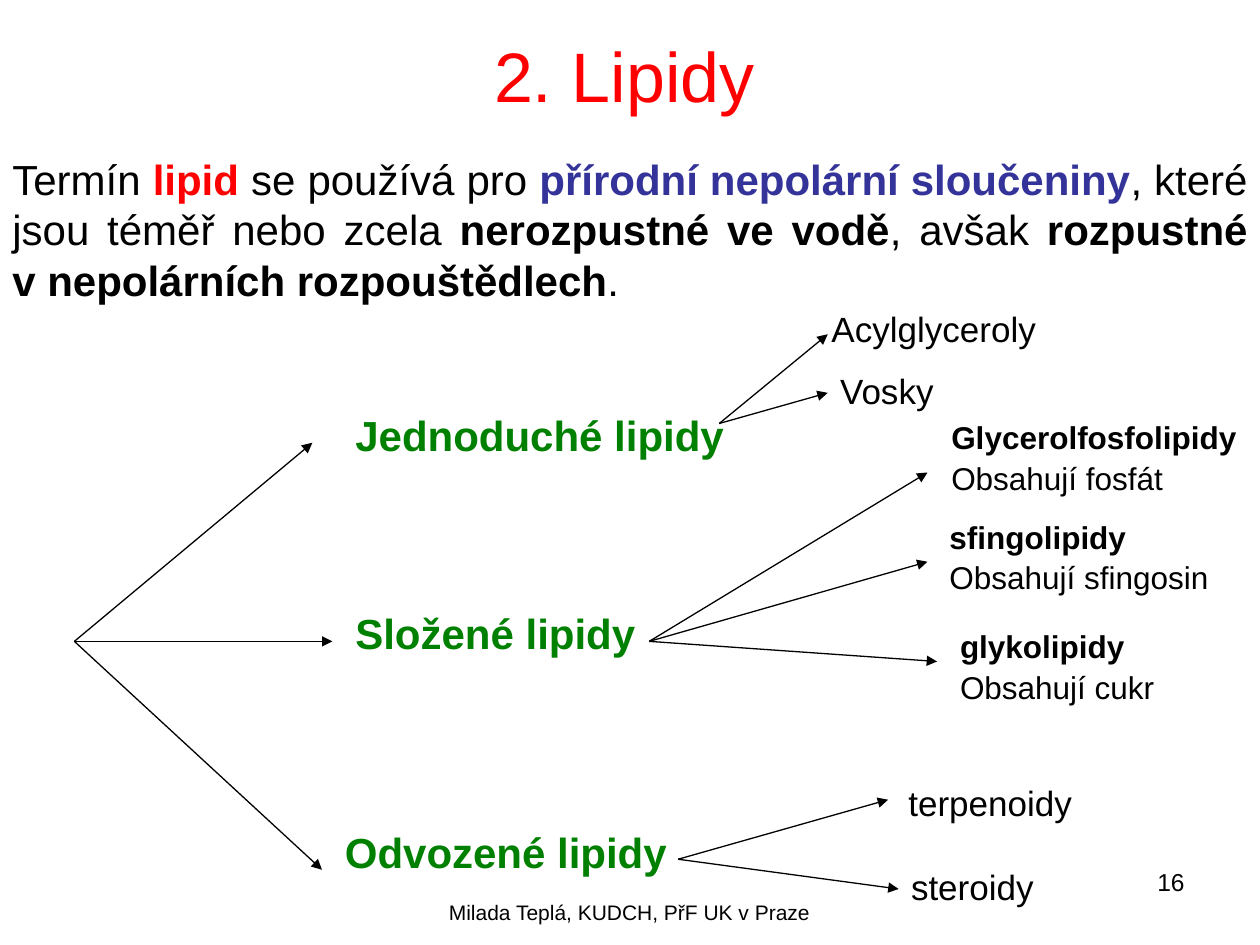
from lxml import etree
from pptx import Presentation
from pptx.dml.color import RGBColor
from pptx.enum import shapes, text
from pptx.oxml.ns import qn
from pptx.util import Pt

BLACK = RGBColor(0, 0, 0)
RED = RGBColor(0xFF, 0, 0)
BLUE = RGBColor(0x33, 0x33, 0x99)
GREEN = RGBColor(0, 0x80, 0)
FONT = "Arial"
ALIGN = text.PP_ALIGN
HARD = chr(160)  # no-break space


def write(par, words, size, color=BLACK, bold=False):
    run = par.add_run()
    run.text = words
    font = run.font
    font.name, font.size, font.bold = FONT, Pt(size), bold
    font.color.rgb = color


def frame(slide, box, wrap=True):
    body = slide.shapes.add_textbox(*map(Pt, box)).text_frame
    body.word_wrap = wrap
    if not wrap:
        body.auto_size = text.MSO_AUTO_SIZE.SHAPE_TO_FIT_TEXT
    return body


def label(slide, box, words, size, color=BLACK, bold=False, align=ALIGN.LEFT, wrap=False):
    par = frame(slide, box, wrap).paragraphs[0]
    par.alignment = align
    write(par, words, size, color, bold)


def arrow(slide, start, end):
    line = slide.shapes.add_connector(
        shapes.MSO_CONNECTOR.STRAIGHT, *map(Pt, (*start, *end)))
    line.line.color.rgb = BLACK
    line.line.width = Pt(0.75)
    etree.SubElement(line.line._get_or_add_ln(), qn("a:tailEnd"), type="triangle")
    etree.SubElement(line._element.spPr, qn("a:effectLst"))


def title(slide, box, words):
    shape = slide.shapes.title
    shape.left, shape.top, shape.width, shape.height = map(Pt, box)
    body = shape.text_frame
    body.word_wrap = False
    body.auto_size = text.MSO_AUTO_SIZE.NONE
    par = body.paragraphs[0]
    par.alignment = ALIGN.CENTER
    write(par, words, 40, RED)


def define(slide, box, parts):
    """Justified paragraph from (words, color, bold) parts."""
    body = frame(slide, box)
    body.vertical_anchor = text.MSO_ANCHOR.MIDDLE
    par = body.paragraphs[0]
    par.alignment = ALIGN.JUSTIFY
    for words, color, bold in parts:
        write(par, words, 24, color, bold)


def branch(slide, box, name, stem, kinds):
    """Group name with a fan of arrows to its kinds, all offset from the box corner."""
    left, top = box[:2]
    label(slide, box, name, 24, GREEN, True)
    for tip, (x, y, wide), kind, *note in kinds:
        arrow(slide, (left + stem[0], top + stem[1]), (left + tip[0], top + tip[1]))
        x, y = left + x, top + y
        if note:
            long, short = wide
            label(slide, (x, y, long, 29), kind, 18, bold=True)
            label(slide, (x, y + 23, short, 29), note[0], 18)
        else:
            label(slide, (x, y, wide, 31), kind, 20)


def footer(slide, box, words, number):
    left, top, wide, high = box
    label(slide, (left, top + 18.5, 294.5, 26), words, 12, align=ALIGN.CENTER, wrap=True)
    label(slide, (left + wide - 168, top, 168, 37.5), number, 14, align=ALIGN.RIGHT, wrap=True)


DEFINITION = [
    ("Termín ", BLACK, False),
    ("lipid", RED, True),
    (" se používá pro ", BLACK, False),
    ("přírodní nepolární sloučeniny", BLUE, True),
    (", které jsou téměř nebo zcela ", BLACK, False),
    ("nerozpustné ve vodě", BLACK, True),
    (", avšak ", BLACK, False),
    (f"rozpustné v{HARD}nepolárních rozpouštědlech", BLACK, True),
    (".", BLACK, False),
]
ROOT = (42.5, 366.5)
# Tip of the root arrow, label box, name, stem of the fan, kinds
GROUPS = [
    ((178.5, 253), (196, 230.5, 225, 36), "Jednoduché lipidy", (215, 11.5), [
        ((277, -39.5), (272, -58.5, 132), "Acylglyceroly"),
        ((277, -6), (277, -23, 69), "Vosky"),
    ]),
    ((190, 366.5), (196, 343.5, 175, 36), "Složené lipidy", (175, 23), [
        ((334, -73.5), (340.5, -108, (178, 136)), "Glycerolfosfolipidy", "Obsahují fosfát"),
        ((334, -22.5), (339.5, -51, (116, 163)), "sfingolipidy", "Obsahují sfingosin"),
        ((339.5, 34.5), (345.5, 11.5, (109, 126)), "glykolipidy", "Obsahují cukr"),
    ]),
    ((184, 497), (190, 468.5, 199, 36), "Odvozené lipidy", (197.5, 22.5), [
        ((317.5, -11.5), (322, -25.5, 109), "terpenoidy"),
        ((323.5, 39.5), (323.5, 22.5, 85), "steroidy"),
    ]),
]


def main():
    deck = Presentation()
    deck.slide_width, deck.slide_height = Pt(720), Pt(540)
    slide = deck.slides.add_slide(deck.slide_layouts[5])
    title(slide, (275, 15, 163.5, 55.5), "2. Lipidy")
    define(slide, (0, 84, 720, 94), DEFINITION)
    for tip, box, name, stem, kinds in GROUPS:
        arrow(slide, ROOT, tip)
        branch(slide, box, name, stem, kinds)
    footer(slide, (212.5, 492, 471.5, 45), "Milada Teplá, KUDCH, PřF UK v Praze", "16")
    deck.save("out.pptx")


if __name__ == "__main__":
    main()
